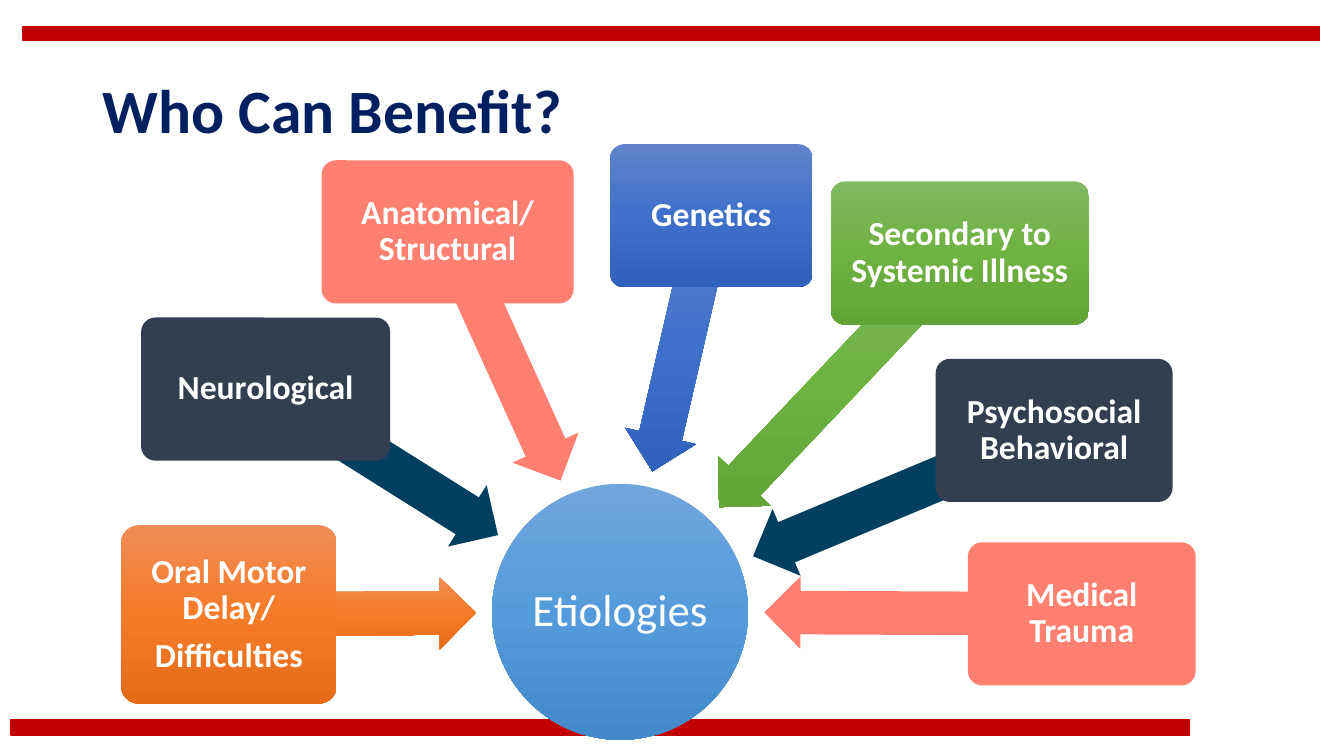
from copy import deepcopy
from math import atan2, cos, degrees, hypot, sin

from pptx import Presentation
from pptx.dml.color import RGBColor
from pptx.enum.shapes import MSO_SHAPE as Form
from pptx.enum.text import MSO_ANCHOR as Anchor, MSO_AUTO_SIZE as Fit, PP_ALIGN as Align
from pptx.oxml.ns import qn
from pptx.util import Inches, Pt

WHITE = RGBColor(0xFF, 0xFF, 0xFF)
NAVY = RGBColor(0x00, 0x20, 0x60)
RED = (RGBColor(0xC0, 0x00, 0x00),)
CORAL = (RGBColor(0xFF, 0x80, 0x70),)
SLATE = (RGBColor(0x33, 0x3F, 0x50),)
TEAL = (RGBColor(0x00, 0x3F, 0x60),)
SKY = (RGBColor(0x71, 0xA6, 0xDB), RGBColor(0x55, 0x9B, 0xDB), RGBColor(0x44, 0x8A, 0xCA))
ORANGE = (RGBColor(0xF1, 0x8C, 0x57), RGBColor(0xF6, 0x7B, 0x28), RGBColor(0xE5, 0x6C, 0x19))
BLUE = (RGBColor(0x61, 0x83, 0xCB), RGBColor(0x3E, 0x70, 0xCA), RGBColor(0x30, 0x62, 0xBB))
GREEN = (RGBColor(0x81, 0xB8, 0x61), RGBColor(0x6F, 0xB2, 0x42), RGBColor(0x62, 0xA3, 0x36))

HUB = (48.8, 48, 25.4, 25.4)
CAUSES = [
    ("Oral Motor Delay/\nDifficulties", (12, 52.1, 21.4, 17.7), ORANGE, ORANGE),
    ("Neurological", (14, 31.5, 24.7, 14.2), SLATE, TEAL),
    ("Anatomical/ Structural", (31.9, 15.9, 25, 14.2), CORAL, CORAL),
    ("Genetics", (60.5, 14.3, 20.1, 14.2), BLUE, BLUE),
    ("Secondary to Systemic Illness", (82.4, 18, 25.6, 14.2), GREEN, GREEN),
    ("Psychosocial Behavioral", (92.8, 35.6, 23.5, 14.2), SLATE, TEAL),
    ("Medical Trauma", (96, 53.8, 22.6, 14.2), CORAL, CORAL),
]


def write(box, text, *, size, color=WHITE, bold=False, align=Align.CENTER, pad=0.05, after=0):
    """Fill a box with one paragraph per line of text, all in one format."""
    frame = box.text_frame
    frame.word_wrap = True
    frame.auto_size = Fit.NONE
    frame.vertical_anchor = Anchor.MIDDLE
    frame.margin_left = frame.margin_right = Inches(pad)
    frame.margin_top = frame.margin_bottom = Inches(pad)
    frame.text = text
    for para in frame.paragraphs:
        para.alignment = align
        para.line_spacing = 0.9
        para.space_before = Pt(0)
        para.space_after = Pt(after)
        for span in para.runs:
            span.font.name = "Calibri"
            span.font.size = Pt(size)
            span.font.bold = bold
            span.font.color.rgb = color


def centre(area):
    """Return the middle of an area in columns and rows."""
    left, top, width, height = area
    return left + width / 2, top + height / 2


class RadialPage:
    """A page on a grid of tenth-inch cells, with causes pointing to a hub."""

    cell = Inches(0.1)
    reach = 14.3
    thickness = 7.2

    def __init__(self, deck):
        self.page = deck.slides.add_slide(deck.slide_layouts[5])

    def place(self, area):
        return [round(length * self.cell) for length in area]

    def paint(self, shape, colors):
        if len(colors) == 1:
            shape.fill.solid()
            shape.fill.fore_color.rgb = colors[0]
            return
        shape.fill.gradient()
        shape.fill.gradient_angle = 270
        gradient = shape.element.spPr.find(qn("a:gradFill"))
        gradient.set("rotWithShape", "0")
        first = gradient.find(qn("a:gsLst"))[0]
        first.addnext(deepcopy(first))
        for stop, position, color in zip(shape.fill.gradient_stops, (0, 0.5, 1), colors):
            stop.position = position
            stop.color.rgb = color

    def shape(self, form, area, colors, adjust=()):
        shape = self.page.shapes.add_shape(form, *self.place(area))
        shape.shadow.inherit = False
        shape.line.fill.background()
        for index, value in enumerate(adjust):
            shape.adjustments[index] = value
        self.paint(shape, colors)
        return shape

    def title(self, text, area):
        box = self.page.shapes.title
        box.left, box.top, box.width, box.height = self.place(area)
        write(box, text, size=44, color=NAVY, bold=True, align=Align.LEFT, pad=0.1)

    def bar(self, area):
        bar = self.shape(Form.RECTANGLE, area, RED)
        bar.line.color.rgb = RED[0]
        bar.line.width = Pt(1)

    def hub(self, text, area):
        write(self.shape(Form.OVAL, area, SKY), text, size=32, pad=0.02, after=11.2)

    def arrow(self, start, goal, colors):
        across, down = start[0] - goal[0], start[1] - goal[1]
        angle = atan2(down, across)
        distance = hypot(across, down)
        length = distance - self.reach
        middle = (distance + self.reach) / 2
        left = goal[0] + middle * cos(angle) - length / 2
        top = goal[1] + middle * sin(angle) - self.thickness / 2
        area = (left, top, length, self.thickness)
        arrow = self.shape(Form.LEFT_ARROW, area, colors, (0.6, 0.5))
        arrow.rotation = degrees(angle) % 360

    def cause(self, text, area, colors, arrow_colors):
        self.arrow(centre(area), centre(HUB), arrow_colors)
        box = self.shape(Form.ROUNDED_RECTANGLE, area, colors, (0.1,))
        write(box, text, size=24, bold=True, after=8.4)


def main():
    deck = Presentation()
    deck.slide_width, deck.slide_height = Inches(13.33), Inches(7.5)
    page = RadialPage(deck)
    page.bar((1.1, 71.4, 116.9, 1.5))
    page.bar((2.3, 2.7, 128.6, 1.3))
    page.title("Who Can Benefit?", (9.2, 4, 115, 14.5))
    page.hub("Etiologies", HUB)
    for cause in CAUSES:
        page.cause(*cause)
    deck.save("out.pptx")


if __name__ == "__main__":
    main()
